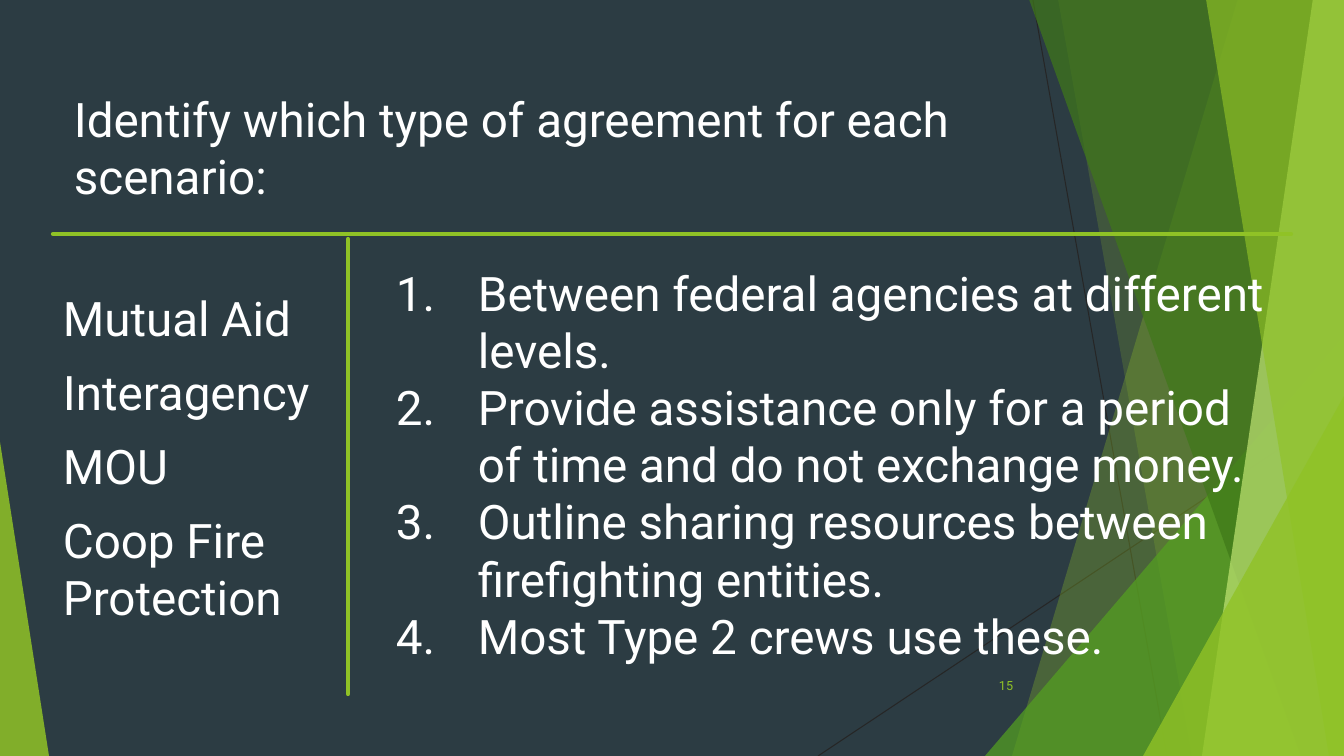
from lxml.etree import SubElement
from pptx import Presentation
from pptx.dml.color import RGBColor
from pptx.enum.shapes import MSO_CONNECTOR as Connector, MSO_SHAPE as Shape
from pptx.enum.text import MSO_ANCHOR as Anchor, PP_ALIGN as Align
from pptx.oxml.ns import qn
from pptx.util import Emu, Pt

WIDTH, HEIGHT = 1344, 756
SCALE = 12192000 / WIDTH
SLATE = RGBColor(0x2C, 0x3C, 0x43)
WHITE = RGBColor(0xFF, 0xFF, 0xFF)
CHARCOAL = RGBColor(0x26, 0x26, 0x26)
LIME = RGBColor(0x90, 0xC2, 0x26)
GREEN = RGBColor(0x54, 0xA0, 0x21)
FOREST = RGBColor(0x3F, 0x78, 0x19)
PALE = RGBColor(0xC0, 0xE4, 0x74)

AGREEMENTS = ["Mutual Aid", "Interagency", "MOU", "Coop Fire Protection"]
SCENARIOS = [
    "Between federal agencies at different levels.",
    "Provide assistance only for a period of time and do not exchange money.",
    "Outline sharing resources between firefighting entities.",
    "Most Type 2 crews use these.",
]


def px(length):
    return Emu(round(length * SCALE))


class SlideBuilder:
    """Draws on one slide in px, with a shared font and text size."""

    font = "Roboto"
    size = 34

    def __init__(self, page):
        self.page = page
        self.shapes = page.shapes

    def background(self, color):
        fill = self.page.background.fill
        fill.solid()
        fill.fore_color.rgb = color

    def paint(self, shape, color, opacity):
        """Fill a shape with no outline; opacity is in percent."""
        shape.shadow.inherit = False
        shape.line.fill.background()
        shape.fill.solid()
        shape.fill.fore_color.rgb = color
        color_node = shape.fill._xPr.find(".//" + qn("a:srgbClr"))
        SubElement(color_node, qn("a:alpha"), val=str(opacity * 1000))

    def blade(self, top_x, bottom_x, color, opacity):
        """Full-height panel from a slanted left edge to the slide's right edge."""
        outline = self.shapes.build_freeform(top_x, -1, scale=SCALE)
        outline.add_line_segments([(WIDTH, -1), (WIDTH, HEIGHT), (bottom_x, HEIGHT)])
        self.paint(outline.convert_to_shape(), color, opacity)

    def corner(self, left, top, width, apex, color, opacity):
        """Triangle on the slide's bottom edge; apex is 0 for left, 1 for right."""
        triangle = self.shapes.add_shape(
            Shape.ISOSCELES_TRIANGLE, px(left), px(top), px(width), px(HEIGHT - top))
        triangle.adjustments[0] = apex
        self.paint(triangle, color, opacity)

    def line(self, start, end, color, weight, cap="flat"):
        rule = self.shapes.add_connector(
            Connector.STRAIGHT, *(px(value) for value in (*start, *end)))
        rule.line.color.rgb = color
        rule.line.width = Pt(weight)
        rule.line._get_or_add_ln().set("cap", cap)
        SubElement(rule._element.spPr, qn("a:effectLst"))

    def text(self, paragraphs, left, top, width, height, size=size, color=WHITE,
             before=0, align=Align.LEFT, anchor=Anchor.TOP, number_indent=0):
        box = self.shapes.add_textbox(px(left), px(top), px(width), px(height))
        frame = box.text_frame
        frame.word_wrap = True
        frame.vertical_anchor = anchor
        for index, words in enumerate(paragraphs):
            para = frame.add_paragraph() if index else frame.paragraphs[0]
            para.alignment = align
            para.space_before = Pt(before)
            span = para.add_run()
            span.text = words
            span.font.name = self.font
            span.font.size = Pt(size)
            span.font.color.rgb = color
            if number_indent:
                self.number(para, number_indent)

    def number(self, para, indent):
        properties = para._p.get_or_add_pPr()
        properties.set("marL", str(px(indent)))
        properties.set("indent", str(-px(indent)))
        SubElement(properties, qn("a:buFont"), typeface=self.font)
        SubElement(properties, qn("a:buAutoNum"), type="arabicPeriod")


def draw_backdrop(slide):
    slide.background(SLATE)
    slide.line((1033, 0), (1167, HEIGHT), CHARCOAL, 0.75)
    slide.line((WIDTH, 406), (818, HEIGHT), CHARCOAL, 0.75)
    slide.blade(1238, 1012, LIME, 30)
    slide.blade(1058, 1192, LIME, 20)
    slide.corner(985, 336, 359, 1, GREEN, 72)
    slide.blade(1029, 1301, FOREST, 70)
    slide.blade(1313, 1202, PALE, 70)
    slide.blade(1206, 1329, LIME, 65)
    slide.corner(1143, 396, 201, 1, LIME, 80)
    slide.corner(0, 442, 49, 0, LIME, 85)


def draw_content(slide):
    slide.text(["Identify which type of agreement for each scenario:"],
               64, 85, 1090, 89, before=10)
    slide.text(["15"], 947, 666, 76, 40, size=9, color=LIME,
               align=Align.RIGHT, anchor=Anchor.MIDDLE)
    slide.line((53, 234), (1291, 234), LIME, 3, cap="rnd")
    slide.line((348, 239), (348, 694), LIME, 3, cap="rnd")
    slide.text(AGREEMENTS, 53, 284, 279, 350, before=12)
    slide.text(SCENARIOS, 386, 259, 904, 414, number_indent=82)


def main():
    deck = Presentation()
    deck.slide_width, deck.slide_height = px(WIDTH), px(HEIGHT)
    slide = SlideBuilder(deck.slides.add_slide(deck.slide_layouts[6]))
    draw_backdrop(slide)
    draw_content(slide)
    deck.save("out.pptx")


if __name__ == "__main__":
    main()
